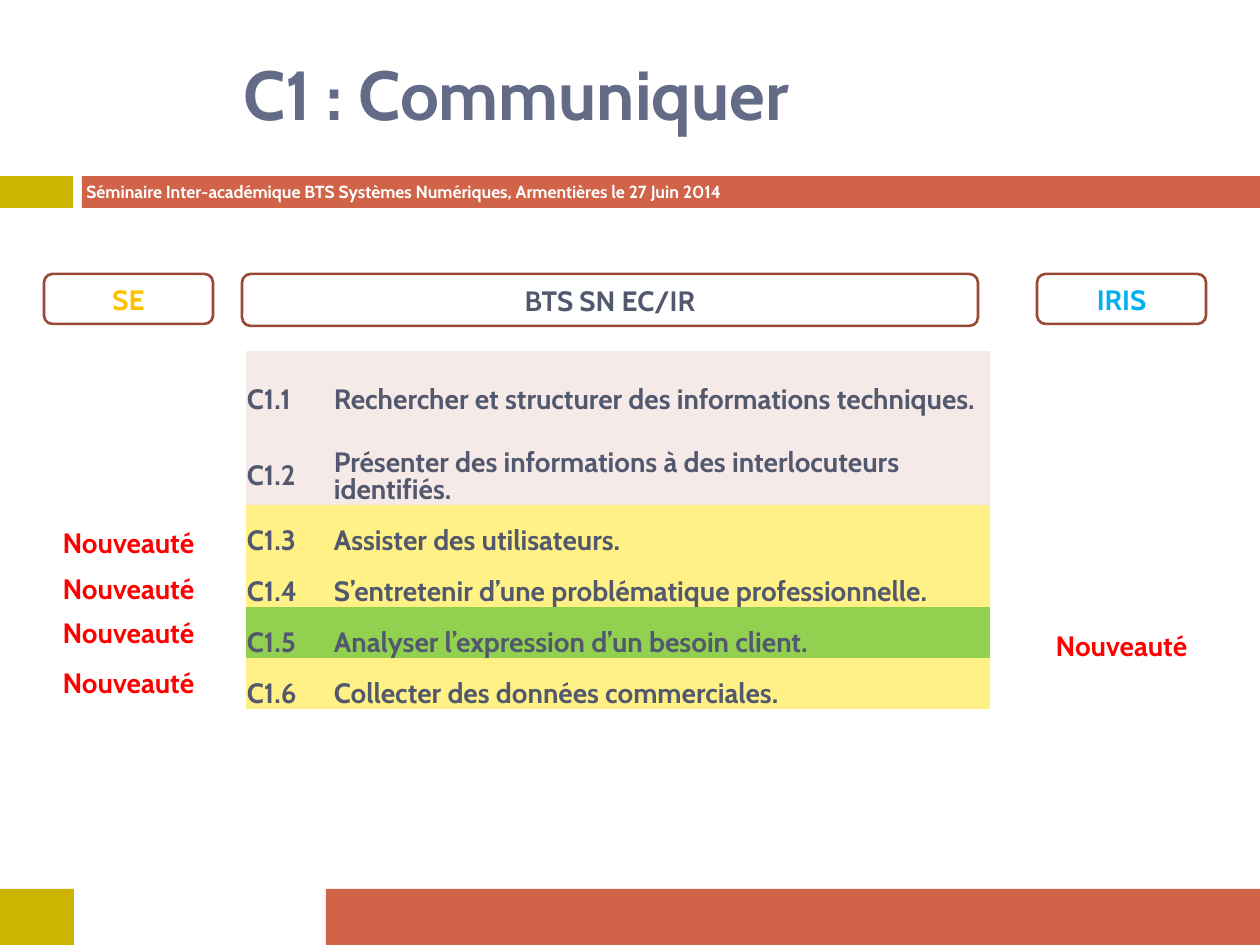
from pptx import Presentation
from pptx.dml.color import RGBColor
from pptx.enum.shapes import MSO_SHAPE
from pptx.enum.text import MSO_ANCHOR, MSO_AUTO_SIZE, PP_ALIGN
from pptx.util import Emu, Pt

RECTANGLE = MSO_SHAPE.RECTANGLE
ROUNDED = MSO_SHAPE.ROUNDED_RECTANGLE
MIDDLE = MSO_ANCHOR.MIDDLE
LEFT, CENTER = PP_ALIGN.LEFT, PP_ALIGN.CENTER

FONT = "Cabin"
NO_GRID_STYLE = "{2D5ABB26-0587-4C30-8999-92F81FD0307C}"

WHITE = RGBColor(0xFF, 0xFF, 0xFF)
OLIVE = RGBColor(0xCC, 0xB4, 0x00)
BRICK = RGBColor(0xD1, 0x63, 0x49)
BROWN = RGBColor(0x9A, 0x49, 0x36)
SLATE = RGBColor(0x64, 0x6B, 0x86)
DARK_SLATE = RGBColor(0x52, 0x58, 0x6E)
GOLD = RGBColor(0xFF, 0xC0, 0x00)
BLUE = RGBColor(0x00, 0xB0, 0xF0)
RED = RGBColor(0xFF, 0x00, 0x00)
PINK = RGBColor(0xF6, 0xEA, 0xE8)
YELLOW = RGBColor(0xFF, 0xF1, 0x85)
GREEN = RGBColor(0x92, 0xD0, 0x50)

BANDS = [
    (0, 176, 73, 32, OLIVE),
    (82, 176, 1178, 32, BRICK),
    (0, 889, 74, 56, OLIVE),
    (326, 889, 934, 56, BRICK),
]
SKILLS = [
    ("C1.1", "Rechercher et structurer des informations techniques.", 76, PINK),
    ("C1.2", "Présenter des informations à des interlocuteurs identifiés.", 76, PINK),
    ("C1.3", "Assister des utilisateurs.", 51, YELLOW),
    ("C1.4", "S’entretenir d’une problématique professionnelle.", 51, YELLOW),
    ("C1.5", "Analyser l’expression d’un besoin client.", 51, GREEN),
    ("C1.6", "Collecter des données commerciales.", 51, YELLOW),
]
COLUMN_WIDTHS = (87, 657)
SE_LEFT, IRIS_LEFT, SIDE_WIDTH = 44, 1037, 169
SE_NEW_TOPS = (525, 571, 615, 665)


def px(length):
    return Emu(round(length * 914400 / 126))


def write(frame, text, size, color, align=LEFT):
    frame.word_wrap = True
    paragraph = frame.paragraphs[0]
    paragraph.text = text
    paragraph.alignment = align
    font = paragraph.font
    font.name, font.size, font.bold = FONT, Pt(size), True
    font.color.rgb = color
    return paragraph


def add_box(slide, kind, left, top, width, height, fill):
    box = slide.shapes.add_shape(kind, px(left), px(top), px(width), px(height))
    box.shadow.inherit = False
    box.fill.solid()
    box.fill.fore_color.rgb = fill
    box.line.fill.background()
    return box


def add_label(slide, left, top, width, height, text, color, outline):
    box = add_box(slide, ROUNDED, left, top, width, height, WHITE)
    box.line.color.rgb = outline
    box.line.width = Pt(1.5)
    box.text_frame.vertical_anchor = MIDDLE
    write(box.text_frame, text, 16, color, CENTER)


def set_title(slide):
    title = slide.shapes.title
    title.left, title.top, title.width, title.height = map(px, (231, 66, 1124, 136))
    title.text_frame.auto_size = MSO_AUTO_SIZE.NONE
    title.text_frame.vertical_anchor = MIDDLE
    write(title.text_frame, "C1 : Communiquer\v", 39.6, SLATE)


def add_event(slide):
    box = slide.shapes.add_textbox(px(74), px(175), px(764), px(55))
    write(box.text_frame,
          "Séminaire Inter-académique BTS Systèmes Numériques, Armentières le 27 Juin 2014",
          10, WHITE)


def fill_cell(cell, text, fill):
    cell.fill.solid()
    cell.fill.fore_color.rgb = fill
    cell.vertical_anchor = MIDDLE
    cell.margin_left = cell.margin_right = px(1)
    cell.margin_top, cell.margin_bottom = px(24), 0
    write(cell.text_frame, text, 16, DARK_SLATE).line_spacing = 0.8


def add_skills(slide):
    height = sum(skill[2] for skill in SKILLS)
    frame = slide.shapes.add_table(len(SKILLS), len(COLUMN_WIDTHS), px(246), px(351),
                                   px(sum(COLUMN_WIDTHS)), px(height))
    table = frame.table
    table.first_row = table.horz_banding = False
    table._tbl.tblPr[0].text = NO_GRID_STYLE
    for column, width in zip(table.columns, COLUMN_WIDTHS):
        column.width = px(width)
    for row, (code, skill, row_height, fill) in zip(table.rows, SKILLS):
        row.height = px(row_height)
        for cell, text in zip(row.cells, (code, skill)):
            fill_cell(cell, text, fill)


def main():
    deck = Presentation()
    deck.slide_width, deck.slide_height = px(1260), px(945)
    slide = deck.slides.add_slide(deck.slide_layouts[5])
    for *place, color in BANDS:
        add_box(slide, RECTANGLE, *place, color)
    add_event(slide)
    set_title(slide)
    add_skills(slide)
    add_label(slide, SE_LEFT, 274, SIDE_WIDTH, 50, "SE", GOLD, BROWN)
    add_label(slide, 242, 274, 736, 52, "BTS SN EC/IR", DARK_SLATE, BROWN)
    add_label(slide, IRIS_LEFT, 274, SIDE_WIDTH, 50, "IRIS", BLUE, BROWN)
    for top in SE_NEW_TOPS:
        add_label(slide, SE_LEFT, top, SIDE_WIDTH, 35, "Nouveauté", RED, WHITE)
    add_label(slide, IRIS_LEFT, 629, SIDE_WIDTH, 33, "Nouveauté", RED, WHITE)
    deck.save("out.pptx")


if __name__ == "__main__":
    main()
